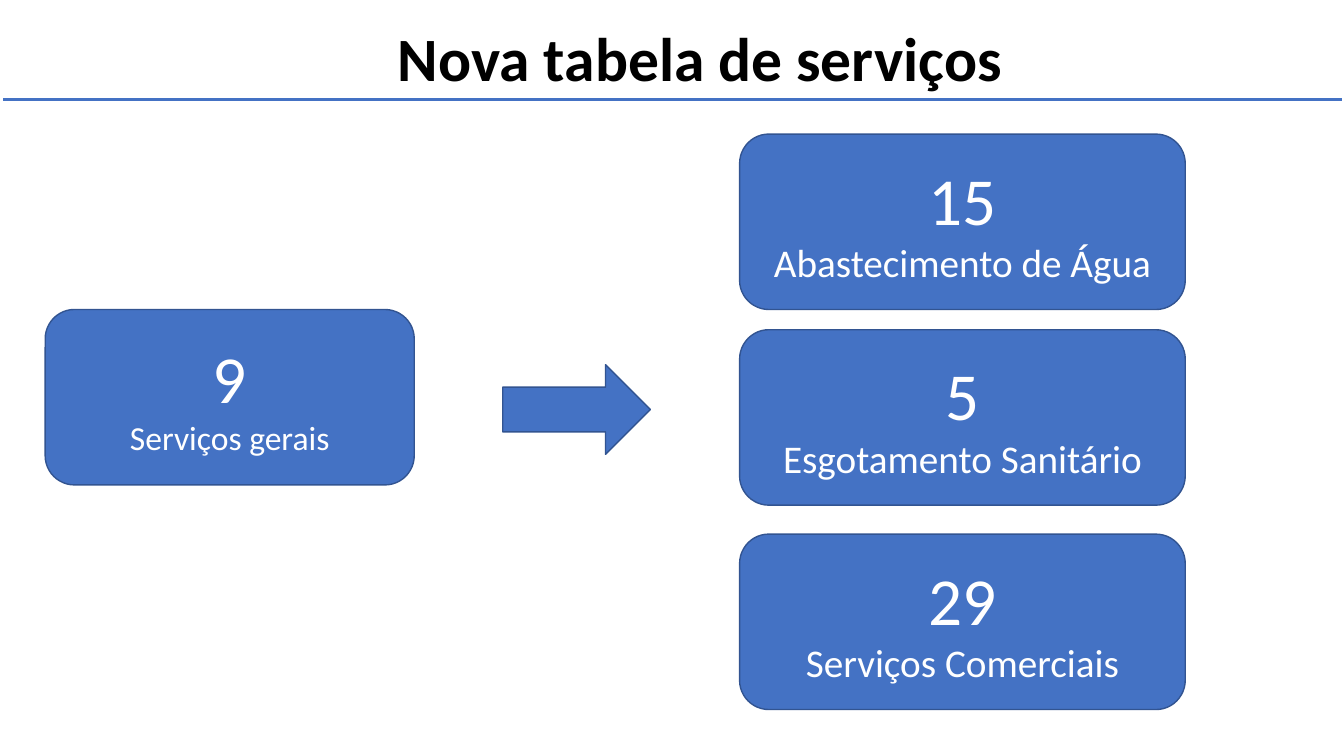
from lxml import etree
from pptx import Presentation
from pptx.dml.color import RGBColor
from pptx.enum import shapes, text
from pptx.oxml import ns
from pptx.util import Cm, Pt

COLORS = {"blue": "4472C4", "outline": "325491", "white": "FFFFFF", "black": "000000"}
FONT = "Calibri"
BOX_HEIGHT = 4.42


def color(name):
    return RGBColor.from_string(COLORS[name])


def add_blue_shape(kind, left, top, width, height):
    shape = slide.shapes.add_shape(kind, Cm(left), Cm(top), Cm(width), Cm(height))
    shape.shadow.inherit = False
    shape.fill.solid()
    shape.fill.fore_color.rgb = color("blue")
    shape.line.color.rgb = color("outline")
    shape.line.width = Pt(1)
    return shape


presentation = Presentation()
presentation.slide_width = Cm(33.87)
presentation.slide_height = Cm(19.05)
slide = presentation.slides.add_slide(presentation.slide_layouts[6])

# Rule under the title
rule = slide.shapes.add_connector(
    shapes.MSO_CONNECTOR.STRAIGHT, Cm(0.08), Cm(2.51), Cm(33.81), Cm(2.51))
rule.line.color.rgb = color("blue")
rule.line.width = Pt(2)
etree.SubElement(rule._element.spPr, ns.qn("a:effectLst"))

# Title
title = slide.shapes.add_textbox(Cm(9.78), Cm(-0.3), Cm(16.79), Cm(3.68))
title.text_frame.word_wrap = True
title.text_frame.vertical_anchor = text.MSO_ANCHOR.MIDDLE
title.text_frame.text = "Nova tabela de serviços"
paragraph = title.text_frame.paragraphs[0]
paragraph.line_spacing = 0.9
font = paragraph.runs[0].font
font.name, font.size, font.bold = FONT, Pt(44), True
font.color.rgb = color("black")

# Service boxes: left, top, width, count, label, label size
boxes = [
    (18.64, 3.38, 11.23, "15", "Abastecimento de Água", 28),
    (18.64, 8.31, 11.23, "5", "Esgotamento Sanitário", 28),
    (18.64, 13.46, 11.23, "29", "Serviços Comerciais", 28),
    (1.14, 7.8, 9.3, "9", "Serviços gerais", 24),
]
for left, top, width, count, label, label_size in boxes:
    box = add_blue_shape(
        shapes.MSO_SHAPE.ROUNDED_RECTANGLE, left, top, width, BOX_HEIGHT)
    box.text_frame.word_wrap = True
    box.text_frame.vertical_anchor = text.MSO_ANCHOR.MIDDLE
    box.text_frame.text = f"{count}\n{label}"
    for paragraph, size in zip(box.text_frame.paragraphs, (48, label_size)):
        paragraph.alignment = text.PP_ALIGN.CENTER
        font = paragraph.runs[0].font
        font.name, font.size = FONT, Pt(size)
        font.color.rgb = color("white")

# Arrow from the old services to the new ones
add_blue_shape(shapes.MSO_SHAPE.RIGHT_ARROW, 12.67, 9.19, 3.72, 2.26)

presentation.save("out.pptx")
